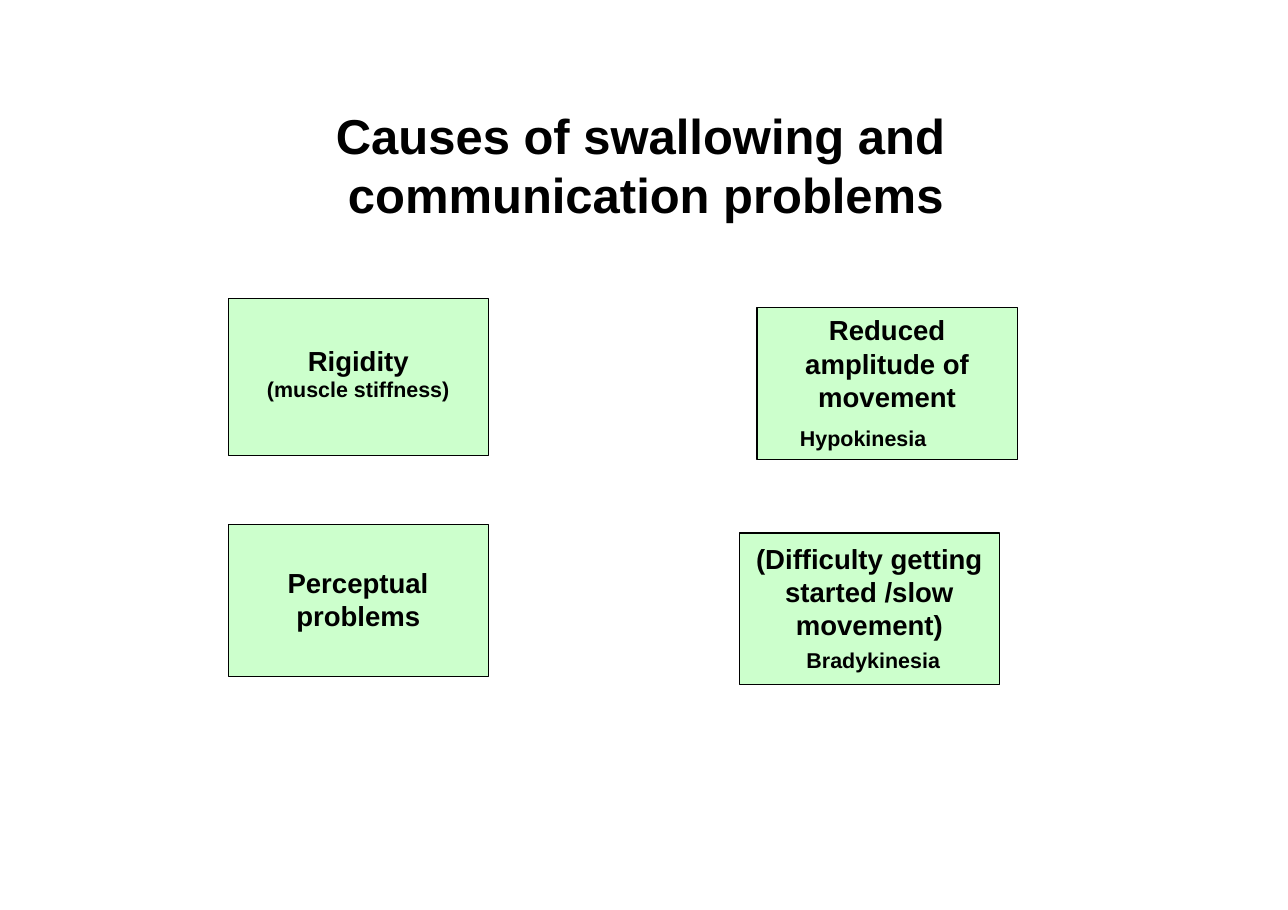
"""Build a slide with four causes of swallowing and communication problems."""
from pptx import Presentation
from pptx.dml.color import RGBColor
from pptx.enum.shapes import MSO_SHAPE
from pptx.enum.text import MSO_ANCHOR, PP_ALIGN
from pptx.util import Cm, Pt

THEME = {
    "ink": RGBColor(0, 0, 0),
    "fill": RGBColor(0xCC, 0xFF, 0xCC),
    "font": "Arial",
    "title": Pt(32),
    "head": Pt(18),
    "note": Pt(14),
}
FRAME = {
    "word_wrap": True,
    "vertical_anchor": MSO_ANCHOR.TOP,
    "margin_left": 0,
    "margin_right": 0,
    "margin_bottom": 0,
}
MID, LEFT = PP_ALIGN.CENTER, PP_ALIGN.LEFT


def apply(item, form):
    """Set every format value on the item."""
    for name, value in form.items():
        setattr(item, name, value)


def write(frame, top, lines):
    """Fill a text frame with (text, size, align, indents, spacing) lines."""
    apply(frame, FRAME | {"margin_top": Cm(top)})
    for i, (text, size, align, dents, space) in enumerate(lines):
        para = frame.add_paragraph() if i else frame.paragraphs[0]
        apply(para, {"alignment": align} | space)
        props = para._p.get_or_add_pPr()
        for name, dent in dents.items():
            props.set(name, str(Cm(dent)))
        run = para.add_run()
        run.text = text
        apply(run.font, {"name": THEME["font"], "size": THEME[size], "bold": True})
        run.font.color.rgb = THEME["ink"]


deck = Presentation()
apply(deck, {"slide_width": Cm(29.69), "slide_height": Cm(20.98)})
slide = deck.slides.add_slide(deck.slide_layouts[5])

title = slide.shapes.title
apply(title, {"left": Cm(3.4), "top": Cm(1.78), "width": Cm(22.89), "height": Cm(3.4)})
write(title.text_frame, 0.66, [
    ("Causes of swallowing and communication problems", "title", LEFT,
     {"marL": 4.62, "indent": -0.28}, {}),
])

boxes = [
    (17.04, 12.29, 3.5, 0.2, [
        ("(Difficulty getting started /slow movement)", "head", MID,
         {"marL": 0.25, "marR": 0.25}, {}),
        ("Bradykinesia", "note", LEFT, {"marL": 1.55}, {"space_before": Pt(4)}),
    ]),
    (17.45, 7.09, 3.5, 0.13, [
        ("Reduced amplitude of movement", "head", MID,
         {"marL": 1, "marR": 1}, {"line_spacing": 1.01}),
        ("Hypokinesia", "note", MID, {"marR": 1.1}, {"space_before": Pt(8)}),
    ]),
    (5.26, 12.09, 3.5, 0.95, [
        ("Perceptual problems", "head", LEFT, {"marL": 1.57, "indent": -0.2}, {}),
    ]),
    (5.26, 6.88, 3.63, 1.05, [
        ("Rigidity", "head", MID, {}, {"line_spacing": Pt(21.4)}),
        ("(muscle stiffness)", "note", MID, {}, {"line_spacing": Pt(16.6)}),
    ]),
]
for left, top, height, inset, lines in boxes:
    box = slide.shapes.add_shape(
        MSO_SHAPE.RECTANGLE, Cm(left), Cm(top), Cm(6), Cm(height))
    box.shadow.inherit = False
    box.fill.solid()
    box.fill.fore_color.rgb = THEME["fill"]
    box.line.color.rgb = THEME["ink"]
    box.line.width = Pt(0.72)
    write(box.text_frame, inset, lines)

deck.save("out.pptx")
